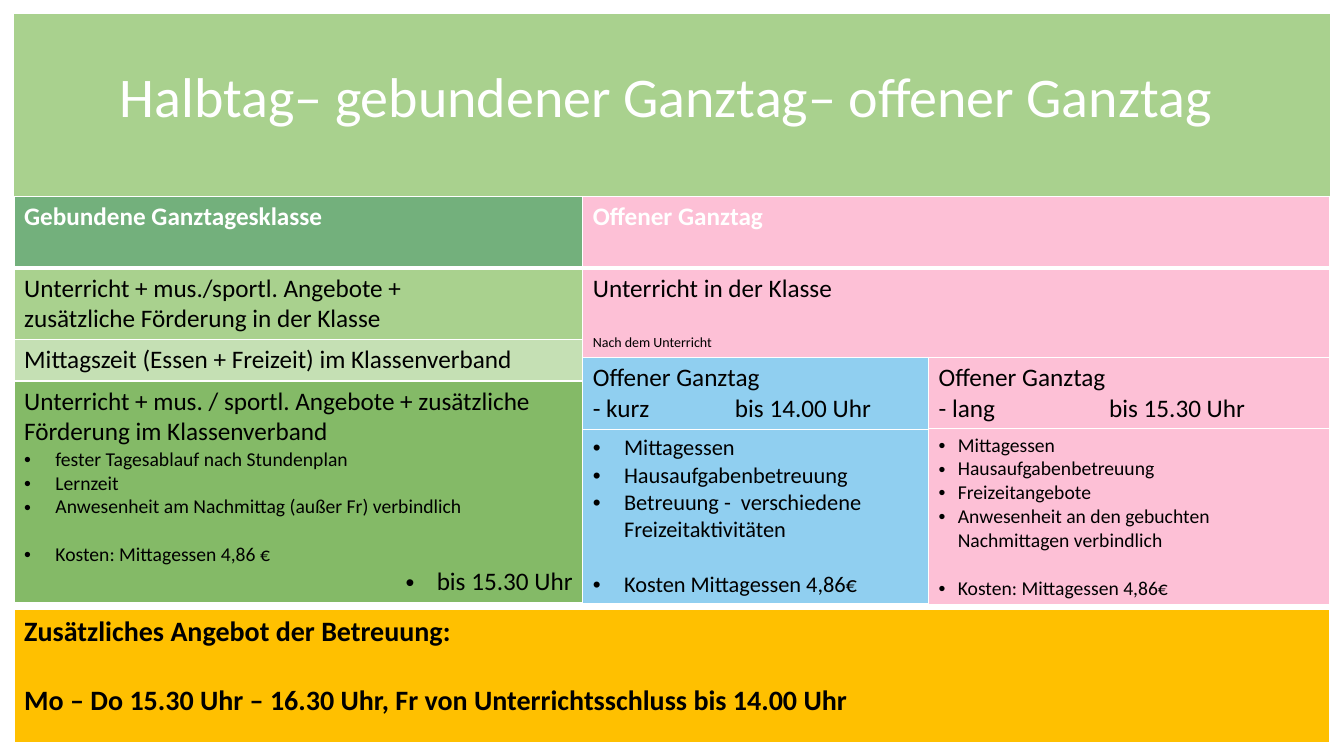
from dataclasses import dataclass

from lxml import etree
from pptx import Presentation
from pptx.dml.color import RGBColor
from pptx.enum.text import MSO_ANCHOR, MSO_AUTO_SIZE, PP_ALIGN
from pptx.oxml.ns import qn
from pptx.util import Inches, Pt

LEFT, CENTER, RIGHT = PP_ALIGN.LEFT, PP_ALIGN.CENTER, PP_ALIGN.RIGHT
BOTTOM = MSO_ANCHOR.BOTTOM
NO_AUTOFIT = MSO_AUTO_SIZE.NONE

FONT = "Calibri"
WHITE, BLACK = "FFFFFF", "000000"
LIGHT_GREEN, PALE_GREEN, LEAF_GREEN, SEA_GREEN = "A9D18E", "C5E0B4", "84BA67", "73B07C"
PINK, BLUE, AMBER = "FDC0D6", "90CFF0", "FFC000"

COLUMN_LINES = (0.14, 5.78, 9.21, 13.19)
ROW_LINES = (0.14, 1.95, 2.66, 3.37, 3.55, 3.78, 4.25, 5.98, 6.05, 7.38)
WIDE_INDENT, NARROW_INDENT = 0.31, 0.19
LINE_HEIGHT = 1.22


@dataclass(frozen=True)
class Line:
    text: str
    size: int = 18
    bold: bool = False
    color: str = BLACK
    indent: float = 0
    gap: int = 0
    align: PP_ALIGN = LEFT
    tab: float = 0


@dataclass(frozen=True)
class Block:
    fill: str
    lines: tuple[Line, ...] = ()
    span: int = 1


@dataclass(frozen=True)
class Grid:
    columns: tuple[int, ...]
    rows: tuple[int, ...]
    blocks: tuple[tuple[Block, ...], ...]


def heading(text: str) -> tuple[Line, ...]:
    return (Line(text, bold=True, color=WHITE),)


def bullets(size: int, indent: float, *texts: str) -> tuple[Line, ...]:
    return tuple(Line(text, size, indent=indent) for text in texts)


def cost(text: str, size: int, indent: float) -> Line:
    return Line(text, size, indent=indent, gap=size)


BOUND_CLASS = Grid((0, 1), (1, 2, 3, 5, 7), (
    (Block(SEA_GREEN, heading("Gebundene Ganztagesklasse")),),
    (Block(LIGHT_GREEN, (
        Line("Unterricht + mus./sportl. Angebote +"),
        Line("zusätzliche Förderung in der Klasse"))),),
    (Block(PALE_GREEN, (Line("Mittagszeit (Essen + Freizeit) im Klassenverband"),)),),
    (Block(LEAF_GREEN, (
        Line("Unterricht + mus. / sportl. Angebote + zusätzliche Förderung im Klassenverband"),
        *bullets(14, WIDE_INDENT, "fester Tagesablauf nach Stundenplan", "Lernzeit",
                 "Anwesenheit am Nachmittag (außer Fr) verbindlich"),
        cost("Kosten: Mittagessen 4,86 €", 14, WIDE_INDENT),
        Line("bis 15.30 Uhr", indent=WIDE_INDENT, align=RIGHT))),),
))

OPEN_DAY = Grid((1, 2, 3), (1, 2, 4, 6, 7), (
    (Block(PINK, heading("Offener Ganztag"), span=2),),
    (Block(PINK, (
        Line("Unterricht in der Klasse"),
        Line("Nach dem Unterricht", 10, gap=18)), span=2),),
    (Block(BLUE, (Line("Offener Ganztag"), Line("- kurz\tbis 14.00 Uhr", tab=1.41))),
     Block(PINK, (Line("Offener Ganztag"), Line("- lang\tbis 15.30 Uhr", tab=1.69)))),
    (Block(BLUE, (
        *bullets(16, WIDE_INDENT, "Mittagessen", "Hausaufgabenbetreuung",
                 "Betreuung -  verschiedene Freizeitaktivitäten"),
        cost("Kosten Mittagessen 4,86€", 16, WIDE_INDENT))),
     Block(PINK)),
))

LONG_DAY = Grid((2, 3), (6, 7), ((Block(PINK, (
    *bullets(14, NARROW_INDENT, "Mittagessen", "Hausaufgabenbetreuung", "Freizeitangebote",
             "Anwesenheit an den gebuchten Nachmittagen verbindlich"),
    cost("Kosten: Mittagessen 4,86€", 14, NARROW_INDENT))),),))

EXTRA_CARE = Grid((0, 3), (8, 9), ((Block(AMBER, (
    Line("Zusätzliches Angebot der Betreuung:", 20, True),
    Line("Mo – Do 15.30 Uhr – 16.30 Uhr, Fr von Unterrichtsschluss bis 14.00 Uhr",
         20, True, gap=20))),),))


def rgb(value: str) -> RGBColor:
    return RGBColor.from_string(value)


def sizes(lines: tuple[float, ...], picks: tuple[int, ...]) -> list[int]:
    return [Inches(lines[end] - lines[start]) for start, end in zip(picks, picks[1:])]


def add_span(para, line: Line) -> None:
    span = para.add_run()
    span.text = line.text
    span.font.name = FONT
    span.font.size = Pt(line.size)
    span.font.bold = line.bold
    span.font.color.rgb = rgb(line.color)


def write_line(para, line: Line) -> None:
    para.alignment = line.align
    if line.gap:
        para.space_before = Pt(round(line.gap * LINE_HEIGHT, 1))
    properties = para._p.get_or_add_pPr()
    if line.indent:
        properties.set("marL", str(Inches(line.indent)))
        properties.set("indent", str(-Inches(line.indent)))
        etree.SubElement(properties, qn("a:buFont"), typeface="Arial")
        etree.SubElement(properties, qn("a:buChar"), char="•")
    if line.tab:
        stops = etree.SubElement(properties, qn("a:tabLst"))
        etree.SubElement(stops, qn("a:tab"), pos=str(Inches(line.tab)), algn="l")
    add_span(para, line)


def add_borders(cell, row: int) -> None:
    properties = cell._tc.get_or_add_tcPr()
    weights = {"a:lnL": 1, "a:lnR": 1,
               "a:lnT": 3 if row == 1 else 1, "a:lnB": 3 if row == 0 else 1}
    for position, (tag, weight) in enumerate(weights.items()):
        border = etree.Element(qn(tag), w=str(Pt(weight)))
        fill = etree.SubElement(border, qn("a:solidFill"))
        etree.SubElement(fill, qn("a:srgbClr"), val=WHITE)
        properties.insert(position, border)


def fill_cell(cell, block: Block) -> None:
    cell.fill.solid()
    cell.fill.fore_color.rgb = rgb(block.fill)
    frame = cell.text_frame
    for position, line in enumerate(block.lines):
        para = frame.add_paragraph() if position else frame.paragraphs[0]
        write_line(para, line)


def add_grid(page, grid: Grid) -> None:
    widths = sizes(COLUMN_LINES, grid.columns)
    heights = sizes(ROW_LINES, grid.rows)
    table = page.shapes.add_table(
        len(heights), len(widths),
        Inches(COLUMN_LINES[grid.columns[0]]), Inches(ROW_LINES[grid.rows[0]]),
        sum(widths), sum(heights)).table
    table.first_row = table.horz_banding = False
    for column, width in zip(table.columns, widths):
        column.width = width
    for row, height in zip(table.rows, heights):
        row.height = height
    for row, blocks in enumerate(grid.blocks):
        for column, block in enumerate(blocks):
            cell = table.cell(row, column)
            if block.span > 1:
                cell.merge(table.cell(row, column + block.span - 1))
            fill_cell(cell, block)
        for column in range(len(widths)):
            add_borders(table.cell(row, column), row)


def format_title(page) -> None:
    title = page.shapes.title
    title.left, title.top = Inches(COLUMN_LINES[0]), Inches(ROW_LINES[0])
    title.width = sizes(COLUMN_LINES, (0, 3))[0]
    title.height = sizes(ROW_LINES, (0, 1))[0]
    title.fill.solid()
    title.fill.fore_color.rgb = rgb(LIGHT_GREEN)
    frame = title.text_frame
    frame.word_wrap = True
    frame.auto_size = NO_AUTOFIT
    frame.vertical_anchor = BOTTOM
    frame.margin_bottom = Inches(0.66)
    frame.margin_right = Inches(0.22)
    para = frame.paragraphs[0]
    para.line_spacing = 0.9
    write_line(para, Line("Halbtag– gebundener Ganztag– offener Ganztag", 40,
                          color=WHITE, align=CENTER))


def main() -> None:
    deck = Presentation()
    deck.slide_width, deck.slide_height = Inches(13.33), Inches(7.5)
    page = deck.slides.add_slide(deck.slide_layouts.get_by_name("Title Only"))
    format_title(page)
    for grid in (OPEN_DAY, LONG_DAY, BOUND_CLASS, EXTRA_CARE):
        add_grid(page, grid)
    deck.save("out.pptx")


if __name__ == "__main__":
    main()
